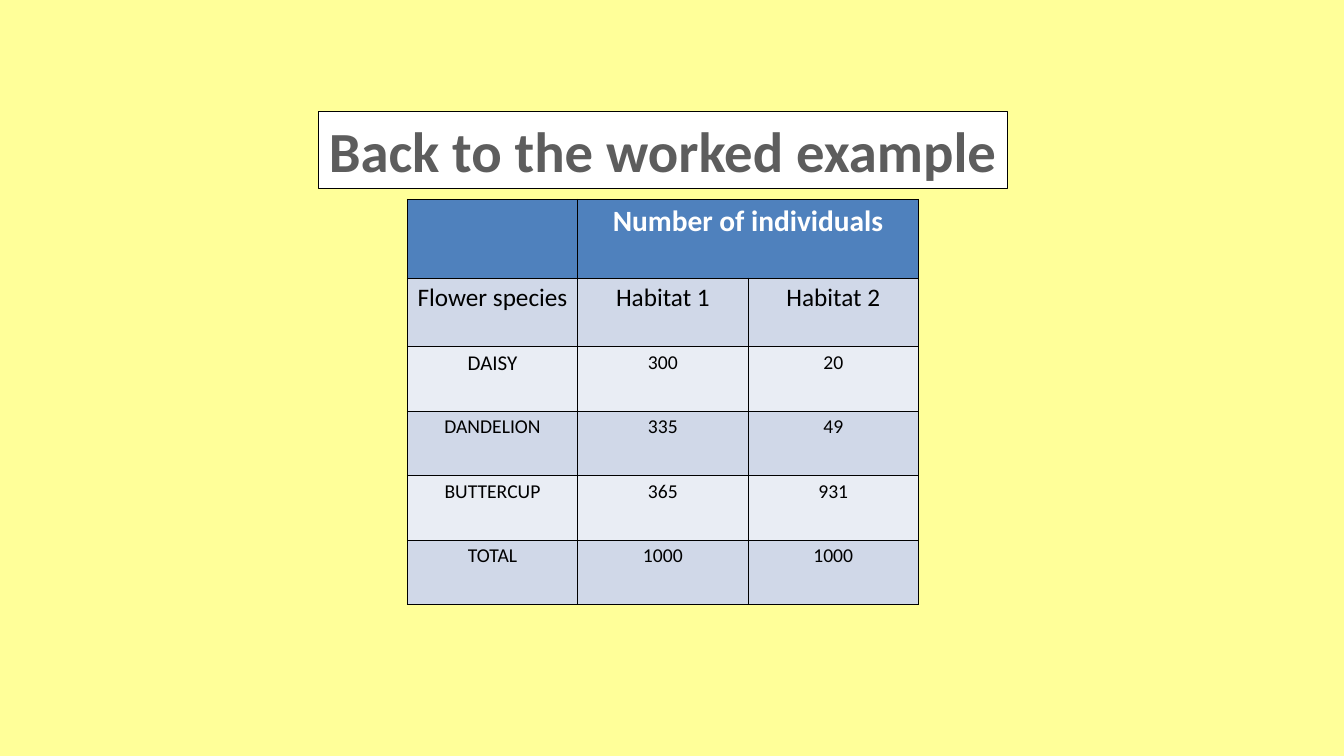
"""Build the worked example slide: flower counts in two habitats."""
from lxml import etree
from pptx import Presentation
from pptx.dml.color import RGBColor
from pptx.enum.text import MSO_ANCHOR, MSO_AUTO_SIZE, PP_ALIGN
from pptx.oxml.ns import qn
from pptx.util import Inches, Pt

CENTER = PP_ALIGN.CENTER
MIDDLE = MSO_ANCHOR.MIDDLE
NO_FIT = MSO_AUTO_SIZE.NONE
COLORS = {
    "background": "FFFF99",
    "white": "FFFFFF",
    "black": "000000",
    "heading": "5D5D5D",
    "header": "4F81BD",
    "dark band": "D0D8E8",
    "light band": "E9EDF4",
}


def rgb(name):
    return RGBColor.from_string(COLORS[name])


def write(frame, text, size=14, color="black", bold=False):
    paragraph = frame.paragraphs[0]
    paragraph.alignment = CENTER
    run = paragraph.add_run()
    run.text = text
    run.font.name = "Calibri"
    run.font.size = Pt(size)
    run.font.bold = bold
    run.font.color.rgb = rgb(color)


prs = Presentation()
prs.slide_width, prs.slide_height = Inches(13.33), Inches(7.5)
slide = prs.slides.add_slide(prs.slide_layouts[5])
slide.background.fill.solid()
slide.background.fill.fore_color.rgb = rgb("background")

rows = [
    ["", "Number of individuals", ""],
    ["Flower species", "Habitat 1", "Habitat 2"],
    ["DAISY", "300", "20"],
    ["DANDELION", "335", "49"],
    ["BUTTERCUP", "365", "931"],
    ["TOTAL", "1000", "1000"],
]
row_heights = [0.78, 0.68] + [0.64] * 4
row_fills = ["header"] + ["dark band", "light band"] * 2 + ["dark band"]
row_sizes = [21, 18] + [14] * 4

counts = slide.shapes.add_table(
    len(rows), 3, Inches(4.04), Inches(1.98), Inches(5.07), Inches(4.02)
).table
for column in counts.columns:
    column.width = Inches(1.69)
counts.cell(0, 1).merge(counts.cell(0, 2))

for r, texts in enumerate(rows):
    counts.rows[r].height = Inches(row_heights[r])
    for c, text in enumerate(texts):
        cell = counts.cell(r, c)
        cell.margin_left = cell.margin_right = Inches(0.08)
        cell.margin_top = cell.margin_bottom = Inches(0.04)
        for side in ("lnL", "lnR", "lnT", "lnB"):
            border = etree.SubElement(
                cell._tc.get_or_add_tcPr(), qn(f"a:{side}"), w=str(Pt(1)))
            border_fill = etree.SubElement(border, qn("a:solidFill"))
            etree.SubElement(border_fill, qn("a:srgbClr"), val=COLORS["black"])
        cell.fill.solid()
        cell.fill.fore_color.rgb = rgb(row_fills[r])
        if text:
            write(cell.text_frame, text,
                  size=15 if text == "DAISY" else row_sizes[r],
                  color="white" if r == 0 else "black", bold=r == 0)

heading = slide.shapes.title
heading.left, heading.top = Inches(3.16), Inches(1.11)
heading.width, heading.height = Inches(6.83), Inches(0.76)
heading.fill.solid()
heading.fill.fore_color.rgb = rgb("white")
heading.line.color.rgb = rgb("black")
heading.line.width = Pt(0.75)
frame = heading.text_frame
frame.auto_size = NO_FIT
frame.word_wrap = False
frame.vertical_anchor = MIDDLE
frame.margin_left = frame.margin_right = Inches(0.07)
frame.margin_top = frame.margin_bottom = Inches(0.04)
write(frame, "Back to the worked example", size=40.5, color="heading", bold=True)

prs.save("out.pptx")
